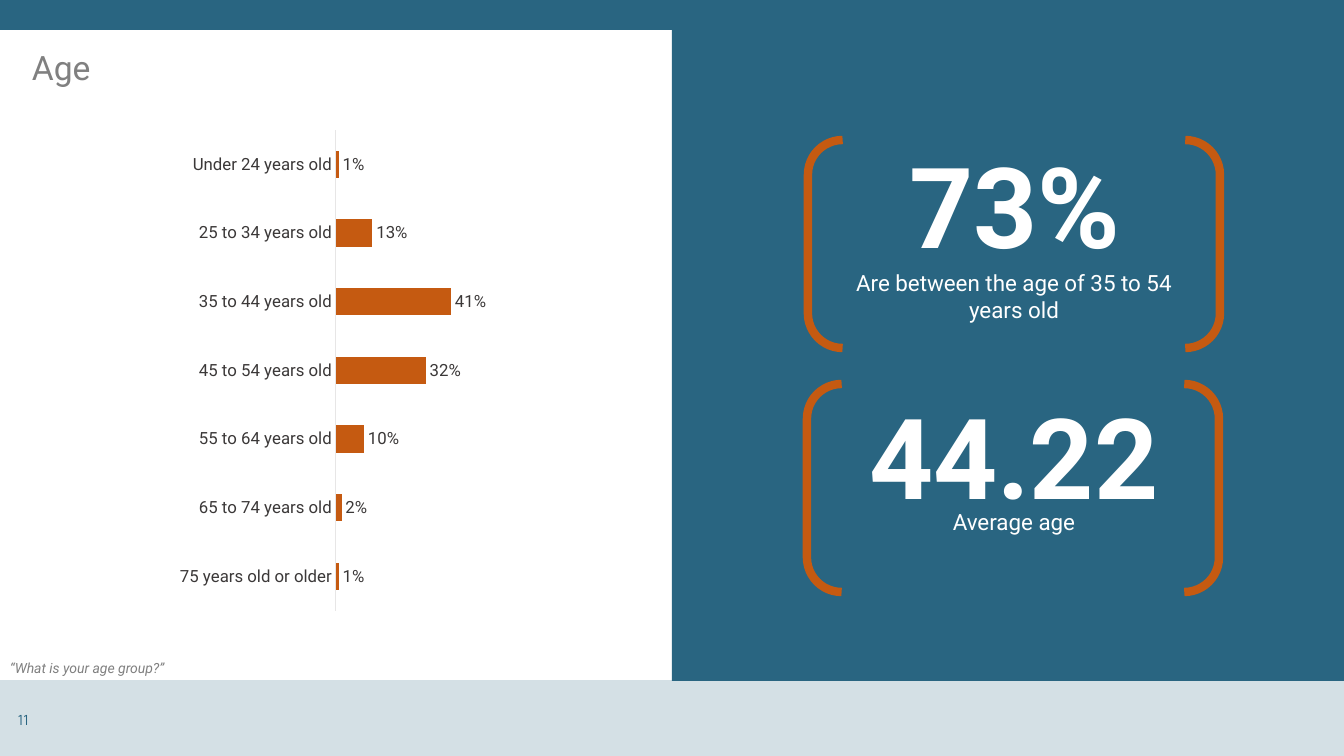
"""Build the survey slide on respondents' age: bar chart and two key figures."""
from lxml import etree
from pptx import Presentation, util as u
from pptx.chart.data import CategoryChartData
from pptx.dml.color import RGBColor
from pptx.enum import chart as ch, shapes, text
from pptx.oxml import ns

PX = 914400 / 100.8
TEAL = RGBColor(0x29, 0x65, 0x81)
ORANGE = RGBColor(0xC5, 0x5A, 0x11)
GREY = RGBColor(0x80, 0x80, 0x80)
DARK = RGBColor(0x3B, 0x38, 0x38)
PALE = RGBColor(0xE7, 0xE6, 0xE6)
WHITE = RGBColor(0xFF, 0xFF, 0xFF)

prs = Presentation()
prs.slide_width, prs.slide_height = u.Emu(round(1344 * PX)), u.Emu(round(756 * PX))
s = prs.slides.add_slide(prs.slide_layouts[6])


def add_shape(kind, *box):
    sp = s.shapes.add_shape(kind, *(round(v * PX) for v in box))
    sp.shadow.inherit = False
    return sp


def add_text(words, box, size, color, font="Roboto", align=text.PP_ALIGN.LEFT):
    tf = s.shapes.add_textbox(*(round(v * PX) for v in box)).text_frame
    tf.word_wrap = True
    p = tf.paragraphs[0]
    p.text, p.alignment = words, align
    p.font.size, p.font.name = u.Pt(size), font
    p.font.color.rgb = color
    return tf


bands = [add_shape(shapes.MSO_SHAPE.RECTANGLE, *box) for box in (
    (0, 680, 1344, 76), (672, 0, 672, 681), (0, 0, 1344, 30))]
for sp in bands:
    sp.fill.solid()
    sp.fill.fore_color.rgb = TEAL
    sp.line.fill.background()
footer_color = bands[0].fill._xPr.find(".//" + ns.qn("a:srgbClr"))
etree.SubElement(footer_color, ns.qn("a:alpha"), val="20000")

tf = add_text("11", (8, 700, 302, 40), 10, TEAL, "Manrope")
tf.vertical_anchor = text.MSO_ANCHOR.MIDDLE
tf = add_text("Age", (22, 47, 448, 103), 24, GREY)
tf.paragraphs[0].line_spacing = 0.9

data = CategoryChartData(number_format="0%")
data.categories = [
    "75 years old or older", "65 to 74 years old", "55 to 64 years old",
    "45 to 54 years old", "35 to 44 years old", "25 to 34 years old",
    "Under 24 years old"]
data.add_series("Series 1", (0.01, 0.02, 0.1, 0.32, 0.41, 0.13, 0.01))
chart = s.shapes.add_chart(
    ch.XL_CHART_TYPE.BAR_CLUSTERED,
    *(round(v * PX) for v in (17, 115, 638, 506)), data).chart
chart.has_legend = chart.has_title = False
chart.font.size, chart.font.name = u.Pt(12), "Roboto"
chart.font.color.rgb = DARK

ages = chart.category_axis
ages.major_tick_mark = ages.minor_tick_mark = ch.XL_TICK_MARK.NONE
ages.format.line.color.rgb = PALE
ages.format.line.width = u.Pt(0.75)
shares = chart.value_axis
shares.minimum_scale, shares.maximum_scale = 0, 1
shares.has_major_gridlines = shares.visible = False

plot = chart.plots[0]
plot.gap_width, plot.vary_by_categories = 150, False
plot.has_data_labels = True
labels = plot.data_labels
labels.show_value = True
labels.number_format, labels.number_format_is_linked = "0%", False
labels.position = ch.XL_LABEL_POSITION.OUTSIDE_END
bars = plot.series[0].format.fill
bars.solid()
bars.fore_color.rgb = ORANGE

plot_area = chart._chartSpace.chart.plotArea
for old in plot_area.findall(ns.qn("c:layout")):
    plot_area.remove(old)
layout = etree.Element(ns.qn("c:layout"))
manual = etree.SubElement(layout, ns.qn("c:manualLayout"))
for tag, val in (("layoutTarget", "inner"), ("xMode", "edge"), ("yMode", "edge"),
                 ("x", "0.5"), ("y", "0.03"), ("w", "0.44"), ("h", "0.95")):
    etree.SubElement(manual, ns.qn("c:" + tag), val=val)
plot_area.insert(0, layout)

tf = add_text("“What is your age group?”", (0, 656, 540, 26), 10, GREY)
tf.paragraphs[0].line_spacing = 0.9
tf.paragraphs[0].font.italic = True

CENTER = text.PP_ALIGN.CENTER
for left, top, figure, figure_top, caption, caption_top, caption_height in (
        (808, 140, "73%", 132, "Are between the age of 35 to 54 years old", 264, 65),
        (807, 384, "44.22", 383, "Average age", 503, 37)):
    sp = add_shape(shapes.MSO_SHAPE.DOUBLE_BRACKET, left, top, 412, 208)
    sp.fill.background()
    sp.line.color.rgb = ORANGE
    sp.line.width = u.Pt(6)
    tf = add_text(figure, (left + 1, figure_top, 412, 146), 80, WHITE, align=CENTER)
    tf.paragraphs[0].font.bold = True
    add_text(caption, (831, caption_top, 366, caption_height), 16, WHITE, align=CENTER)

prs.save("out.pptx")
